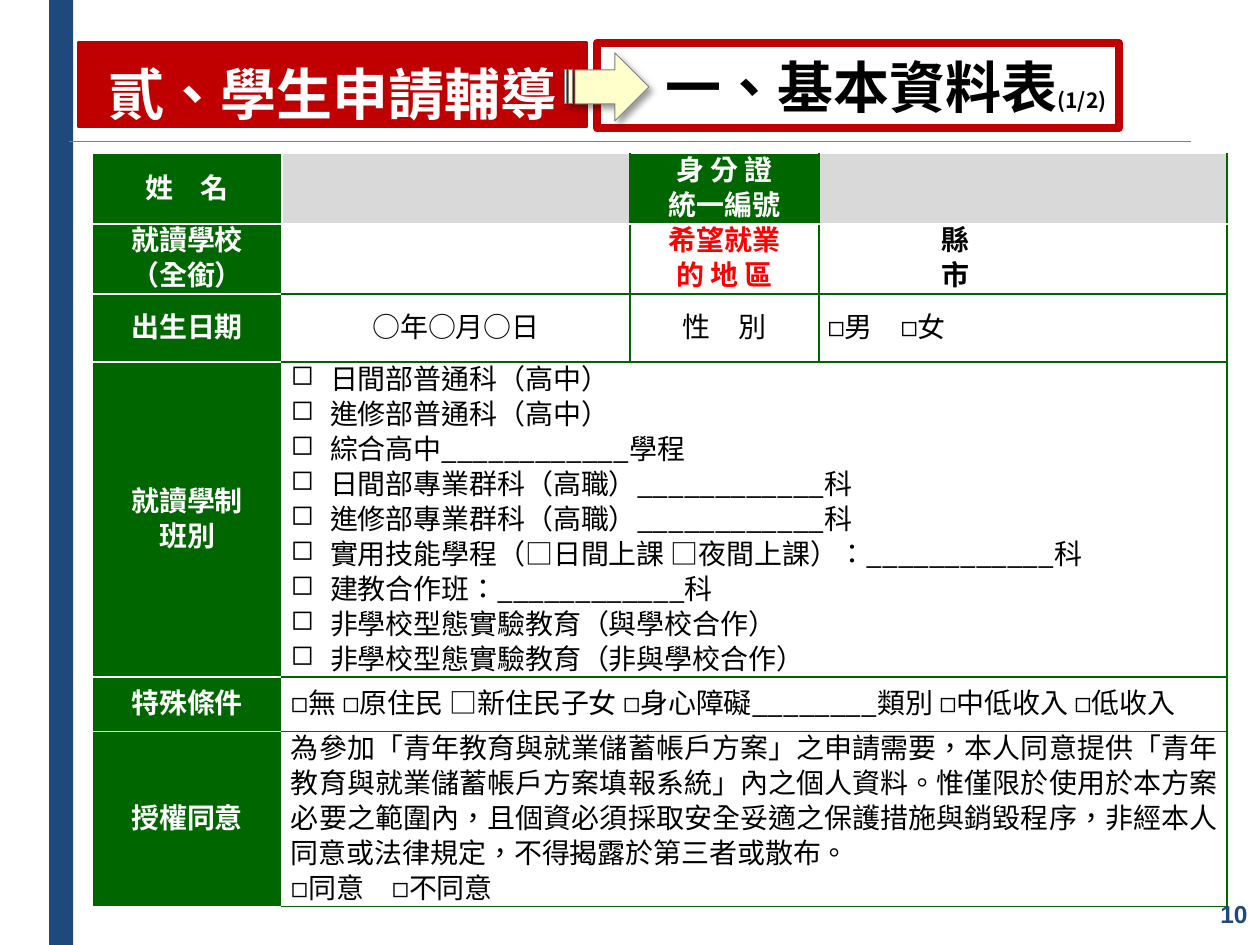
from dataclasses import dataclass
from typing import NamedTuple, Optional

from lxml import etree
from pptx import Presentation
from pptx.dml.color import RGBColor
from pptx.enum.shapes import MSO_CONNECTOR, MSO_SHAPE
from pptx.enum.text import MSO_ANCHOR, MSO_AUTO_SIZE, PP_ALIGN
from pptx.oxml.ns import qn
from pptx.util import Inches, Pt

LEFT, CENTER, RIGHT = PP_ALIGN.LEFT, PP_ALIGN.CENTER, PP_ALIGN.RIGHT
JUSTIFY = PP_ALIGN.JUSTIFY
MIDDLE = MSO_ANCHOR.MIDDLE
TITLE_ONLY = 5
SLIDE_W, SLIDE_H = Inches(10), Inches(7.5)


@dataclass(frozen=True)
class Theme:
    navy: str = "1F497D"
    red: str = "C00000"
    alert: str = "FF0000"
    green: str = "006600"
    grey: str = "D9D9D9"
    rule: str = "808080"
    cream: str = "FFFFCC"
    white: str = "FFFFFF"
    black: str = "000000"
    cjk: str = "Noto Sans CJK SC"
    latin: str = "Arial"
    heading: float = 32
    body: float = 16
    page: float = 14
    note: float = 12
    leading: float = 20


THEME = Theme()


class Box(NamedTuple):
    """Left, top, width and height in percent of the slide."""
    x: float
    y: float
    w: float
    h: float

    def emu(self) -> tuple:
        return tuple(int(share * side / 100) for share, side in
                     zip(self, (SLIDE_W, SLIDE_H, SLIDE_W, SLIDE_H)))


@dataclass(frozen=True)
class Entry:
    """One table cell: its paragraphs and their look."""
    lines: tuple = ()
    ink: str = THEME.black
    bold: bool = False
    align: PP_ALIGN = LEFT
    fill: Optional[str] = None
    indent: float = 0
    bullet: str = ""
    last_align: Optional[PP_ALIGN] = None
    span: int = 1


def header(*lines: str) -> Entry:
    return Entry(lines, THEME.white, True, CENTER, THEME.green)


def wide(*lines: str, **look) -> Entry:
    return Entry(lines, span=3, **look)


BLANK = Entry()
SHADED = Entry(fill=THEME.grey)
COLUMNS = (1.51, 2.76, 1.5, 3.24)
ROWS = (0.55, 0.54, 0.54, 2.35, 0.43, 1.39)
FORM = (
    (header("姓　名"), SHADED, header("身 分 證", "統一編號"), SHADED),
    (header("就讀學校", "（全銜）"), BLANK,
     Entry(("希望就業", "的 地 區"), THEME.alert, True, CENTER),
     Entry(("縣", "市"), bold=True, indent=0.9)),
    (header("出生日期"), Entry(("○年○月○日",), align=CENTER),
     Entry(("性　別",), align=CENTER), Entry(("◻男　◻女",))),
    (header("就讀學制", "班別"),
     wide("日間部普通科（高中）", "進修部普通科（高中）",
          "綜合高中____________學程",
          "日間部專業群科（高職）____________科",
          "進修部專業群科（高職）____________科",
          "實用技能學程（□日間上課 □夜間上課）：____________科",
          "建教合作班：____________科",
          "非學校型態實驗教育（與學校合作）",
          "非學校型態實驗教育（非與學校合作）",
          bullet="◻", indent=0.31)),
    (header("特殊條件"),
     wide("◻無 ◻原住民 □新住民子女 ◻身心障礙________類別 ◻中低收入 ◻低收入")),
    (header("授權同意"),
     wide("為參加「青年教育與就業儲蓄帳戶方案」之申請需要，本人同意提供「青年"
          "教育與就業儲蓄帳戶方案填報系統」內之個人資料。惟僅限於使用於本方案"
          "必要之範圍內，且個資必須採取安全妥適之保護措施與銷毀程序，非經本人"
          "同意或法律規定，不得揭露於第三者或散布。",
          "◻同意　◻不同意", align=JUSTIFY, last_align=LEFT)),
)


def rgb(colour: str) -> RGBColor:
    return RGBColor.from_string(colour)


def add_run(paragraph, text: str, size: float, colour: str,
            bold: bool = True, face: str = THEME.cjk) -> None:
    run = paragraph.add_run()
    run.text = text
    run.font.size, run.font.bold, run.font.name = Pt(size), bold, face
    run.font.color.rgb = rgb(colour)
    properties = run._r.get_or_add_rPr()
    properties.set("lang", "zh-TW")
    etree.SubElement(properties, qn("a:ea"), typeface=face)


def paint(shape, fill: str, line: Optional[str] = None, width: float = 0) -> None:
    shape.fill.solid()
    shape.fill.fore_color.rgb = rgb(fill)
    if line:
        shape.line.color.rgb = rgb(line)
        shape.line.width = Pt(width)
    else:
        shape.line.fill.background()
    shape.shadow.inherit = False


def start_text(shape, align: PP_ALIGN):
    frame = shape.text_frame
    frame.auto_size = MSO_AUTO_SIZE.NONE
    frame.word_wrap = False
    frame.vertical_anchor = MIDDLE
    paragraph = frame.paragraphs[0]
    paragraph.alignment = align
    return paragraph


def add_shadow(shape) -> None:
    effects = shape._element.spPr.find(qn("a:effectLst"))
    shadow = etree.SubElement(effects, qn("a:outerShdw"), blurRad=str(Pt(4)),
                              dist=str(Pt(3)), dir=str(45 * 60000))
    colour = etree.SubElement(shadow, qn("a:srgbClr"), val=THEME.black)
    etree.SubElement(colour, qn("a:alpha"), val="40000")


def draw_borders(cell, row: int, col: int) -> None:
    """Green rules, white around the header column and the first row."""
    white_sides = {"L": col < 2, "R": col == 0,
                   "T": col == 0 or row < 2, "B": col == 0 or row == 0}
    properties = cell._tc.get_or_add_tcPr()
    for side, is_white in white_sides.items():
        line = etree.SubElement(properties, qn(f"a:ln{side}"), w=str(Pt(1)))
        fill = etree.SubElement(line, qn("a:solidFill"))
        etree.SubElement(fill, qn("a:srgbClr"),
                         val=THEME.white if is_white else THEME.green)


def fill_cell(cell, entry: Entry) -> None:
    cell.margin_left = cell.margin_right = Inches(0.07)
    cell.margin_top = cell.margin_bottom = 0
    cell.vertical_anchor = MIDDLE
    if entry.fill:
        cell.fill.solid()
        cell.fill.fore_color.rgb = rgb(entry.fill)
    else:
        cell.fill.background()
    frame = cell.text_frame
    for index, line in enumerate(entry.lines):
        paragraph = frame.add_paragraph() if index else frame.paragraphs[0]
        last = index == len(entry.lines) - 1
        paragraph.alignment = (entry.last_align if last else None) or entry.align
        paragraph.line_spacing = Pt(THEME.leading)
        if entry.indent:
            properties = paragraph._p.get_or_add_pPr()
            properties.set("marL", str(Inches(entry.indent)))
            if entry.bullet:
                properties.set("indent", str(-Inches(entry.indent)))
                etree.SubElement(properties, qn("a:buChar"), char=entry.bullet)
        add_run(paragraph, line, THEME.body, entry.ink, entry.bold)


def add_form(slide) -> None:
    place = Box(7.3, 16.27, 90.1, 77.33).emu()
    table = slide.shapes.add_table(len(ROWS), len(COLUMNS), *place).table
    table.first_row = table.horz_banding = False
    for column, width in zip(table.columns, COLUMNS):
        column.width = Inches(width)
    for row, height in zip(table.rows, ROWS):
        row.height = Inches(height)
    for r, entries in enumerate(FORM):
        for c in range(len(COLUMNS)):
            draw_borders(table.cell(r, c), r, c)
        for c, entry in enumerate(entries):
            if entry.span > 1:
                table.cell(r, c).merge(table.cell(r, c + entry.span - 1))
            fill_cell(table.cell(r, c), entry)


def main() -> None:
    deck = Presentation()
    deck.slide_width, deck.slide_height = SLIDE_W, SLIDE_H
    slide = deck.slides.add_slide(deck.slide_layouts[TITLE_ONLY])
    shapes = slide.shapes

    # Side bar and heading rule
    side_bar = shapes.add_shape(MSO_SHAPE.RECTANGLE, *Box(3.9, 0, 1.9, 100).emu())
    paint(side_bar, THEME.navy)
    x, y, w, _ = Box(5.5, 14.93, 89, 0).emu()
    rule = shapes.add_connector(MSO_CONNECTOR.STRAIGHT, x, y, x + w, y)
    rule.line.color.rgb, rule.line.width = rgb(THEME.rule), Pt(0.25)
    etree.SubElement(rule._element.spPr, qn("a:effectLst"))

    # Application form and page number
    add_form(slide)
    page = shapes.add_textbox(*Box(86.9, 93.73, 13.1, 5.87).emu())
    add_run(start_text(page, RIGHT), "10", THEME.page, THEME.navy, face=THEME.latin)

    # Section, then its topic, joined by an arrow
    section = shapes.title
    section.left, section.top, section.width, section.height = Box(
        6.2, 4.53, 40.4, 8.93).emu()
    paint(section, THEME.red, THEME.red, 1.5)
    heading = start_text(section, CENTER)
    heading.line_spacing = 1.25
    add_run(heading, "貳、學生申請輔導", THEME.heading, THEME.white)

    topic = shapes.add_shape(MSO_SHAPE.RECTANGLE, *Box(47.4, 4.53, 41.4, 9.07).emu())
    paint(topic, THEME.white, THEME.red, 4.5)
    heading = start_text(topic, RIGHT)
    add_run(heading, "一、基本資料表", THEME.heading, THEME.black)
    add_run(heading, "(1/2)", THEME.note, THEME.black)

    arrow = shapes.add_shape(MSO_SHAPE.STRIPED_RIGHT_ARROW,
                             *Box(44.8, 5.6, 6.7, 7.2).emu())
    paint(arrow, THEME.cream, THEME.rule, 0.5)
    add_shadow(arrow)

    deck.save("out.pptx")


if __name__ == "__main__":
    main()
